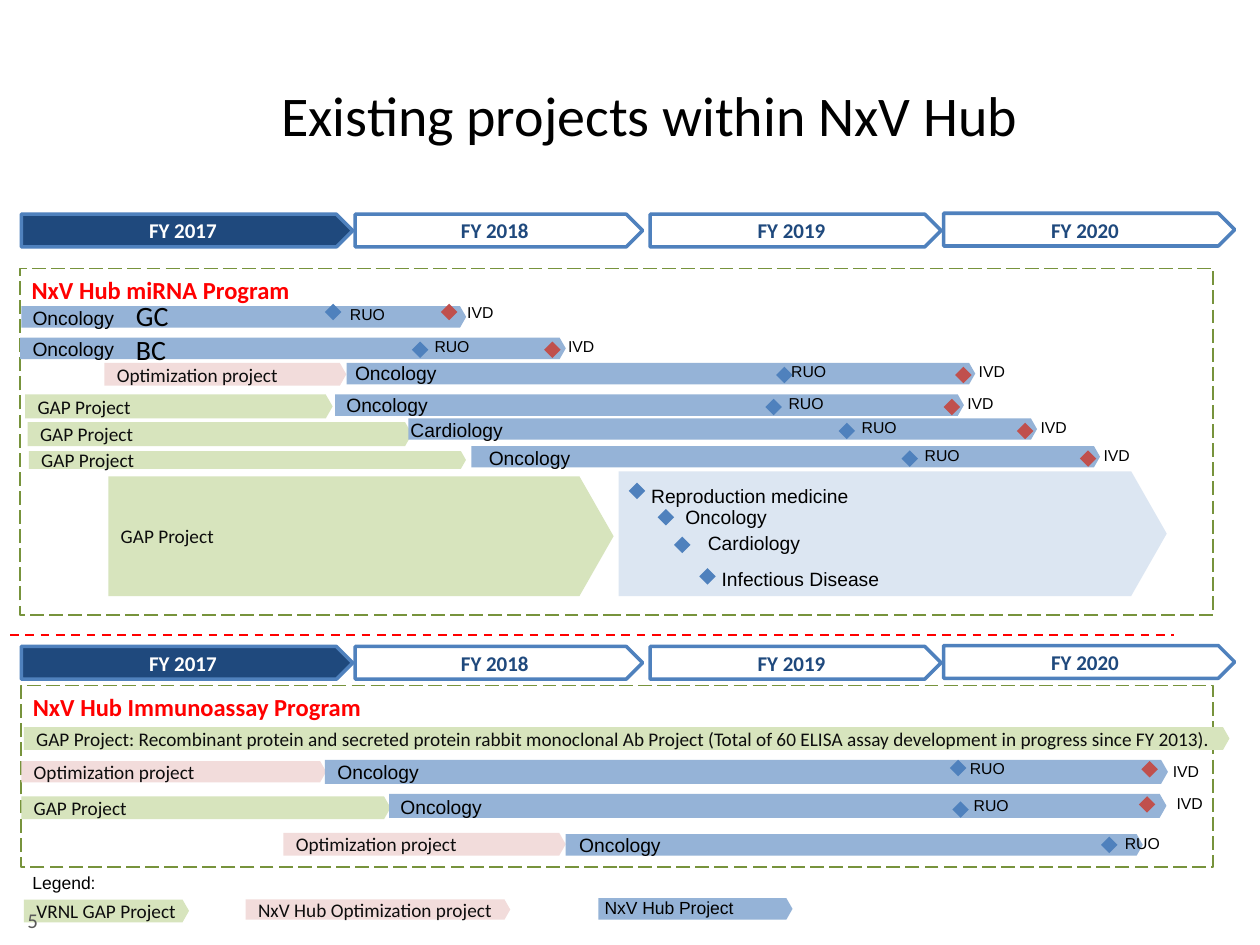
from lxml.etree import SubElement
from pptx import Presentation
from pptx.dml.color import RGBColor
from pptx.enum.dml import MSO_LINE
from pptx.enum.shapes import MSO_CONNECTOR, MSO_SHAPE
from pptx.enum.text import MSO_ANCHOR, PP_ALIGN
from pptx.oxml.ns import qn
from pptx.util import Pt

COLORS = {
    "project": "95B3D7", "topics": "DCE6F2", "gap": "D7E4BD", "opt": "F2DCDB",
    "RUO": "4F81BD", "IVD": "C0504D", "frame": "77933C", "red": "FF0000",
    "navy": "1F497D", "edge": "4F81BD", "white": "FFFFFF", "black": "000000",
    "ink": "0D0D0D", "gray": "595959",
}
STAGES = {"gap": "GAP Project", "opt": "Optimization project"}
WIDTHS = {"RUO": 34.6, "IVD": 29.5, "Oncology": 61.2, "Cardiology": 67.7,
          "Infectious Disease": 105.1, "Reproduction medicine": 128.2}
YEARS = [("FY 2017", 0, 0, 189.4), ("FY 2018", 190.8, 0, 164.2),
         ("FY 2019", 359.3, 0, 166.3), ("FY 2020", 527, -0.5, 166.3)]

# Stage: kind, left, top, width, height, own label if any
# Project: bar box, name, name offset, marks (kind, diamond offset, label offset)
MIRNA = {
    "title": "NxV Hub miRNA Program",
    "stages": [
        ("opt", 48.2, 54, 138.2, 13), ("gap", 2.9, 72, 175.7, 13.7),
        ("gap", 4.3, 87.8, 219.6, 13.7), ("gap", 5, 104.4, 249.8, 10.1),
        ("gap", 50.4, 118.8, 288.7, 68.4),
    ],
    "projects": [
        ((0.7, 21.6, 254.2, 12.2), "Oncology", (-0.7, -3.6),
         [("RUO", 173.5, -1.4, 180.7, -4.3), ("IVD", 239.8, -1.4, 247.7, -5.8)]),
        ((0, 39.6, 311.8, 12.2), "Oncology", (0, -3.6),
         [("RUO", 223.9, 2.2, 229.7, -4.3), ("IVD", 299.5, 2.2, 306, -4.3)]),
        ((186.5, 54, 359.3, 12.2), "Oncology", (-2.2, -4.3),
         [("RUO", 245.5, 2.2, 247, -4.3), ("IVD", 347.8, 2.2, 354.2, -4.3)]),
    ] + [
        (box, name, shift,
         [("RUO", 245.9, 2.5, 252, -4), ("IVD", 347.8, 2.5, 354.2, -4)])
        for box, name, shift in [
            ((180, 72, 359.3, 12.2), "Oncology", (-0.7, -4.3)),
            ((221.8, 85.7, 359.3, 12.2), "Cardiology", (-5.8, -3.6)),
            ((257.8, 101.5, 359.3, 12.2), "Oncology", (2.9, -3.6))]
    ],
}
IMMUNO = {
    "title": "NxV Hub Immunoassay Program",
    "stages": [
        ("gap", 1.4, 23.8, 689, 13,
         "GAP Project: Recombinant protein and secreted protein rabbit monoclonal "
         "Ab Project (Total of 60 ELISA assay development in progress since FY 2013)."),
        ("opt", 0, 43.2, 174.2, 12.2), ("gap", 0, 63.4, 211, 13),
        ("opt", 149.8, 84.2, 161.3, 13),
    ],
    "projects": [
        ((173.5, 42.5, 481.7, 13.7), "Oncology", (0, -3.6),
         [("RUO", 357.1, 0, 361.4, -4.3), ("IVD", 466.6, 0.7, 477.4, -2.2)]),
        ((210.2, 61.9, 444.2, 13.7), "Oncology", (-0.7, -2.9),
         [("RUO", 321.8, 4.3, 326.9, -2.2), ("IVD", 428.4, 1.4, 442.8, -3.6)]),
        ((311, 85, 329.8, 12.2), "Oncology", (0.7, -4.3),
         [("RUO", 306, 1.4, 312.5, -3.6)]),
    ],
}
TOPICS = [("Reproduction medicine", 5.8, 6.5, 11.5, 3.6),
          ("Oncology", 22.3, 21.6, 31, 15.8),
          ("Cardiology", 31.7, 37.4, 43.9, 31),
          ("Infectious Disease", 46.1, 55.4, 51.8, 51.1)]


def rgb(name):
    return RGBColor.from_string(COLORS[name])


def style(shape, words, size, font="Arial", color="black", bold=False,
          align=PP_ALIGN.LEFT):
    shape.text_frame.text = words
    para = shape.text_frame.paragraphs[0]
    para.alignment = align
    for run in para.runs:
        run.font.size, run.font.name, run.font.bold = Pt(size), font, bold
        run.font.color.rgb = rgb(color)


def label(slide, box, words, size, **look):
    shape = slide.shapes.add_textbox(*map(Pt, box))
    style(shape, words, size, **look)
    return shape


def block(slide, kind, box, fill=None, line=None, width=1):
    shape = slide.shapes.add_shape(kind, *map(Pt, box))
    shape.shadow.inherit = False
    if fill:
        shape.fill.solid()
        shape.fill.fore_color.rgb = rgb(fill)
    else:
        shape.fill.background()
    if line:
        shape.line.color.rgb = rgb(line)
        shape.line.width = Pt(width)
    else:
        shape.line.fill.background()
    return shape


def arrow(slide, box, fill, words=""):
    shape = block(slide, MSO_SHAPE.PENTAGON, box, fill)
    shape.adjustments[0] = 0.285
    if words:
        style(shape, words, 11, "Calibri", "ink")
        shape.text_frame.word_wrap = True
        shape.text_frame.margin_right = 0
        shape.text_frame.vertical_anchor = MSO_ANCHOR.MIDDLE


def mark(slide, left, top, kind):
    block(slide, MSO_SHAPE.DIAMOND, (left, top, 9.4, 9.4), kind)


def years(slide, left, top):
    """Row of fiscal years, the current one filled."""
    for i, (year, dx, dy, width) in enumerate(YEARS):
        box = (left + dx, top + dy, width, 18.7)
        fill, color = ("white", "navy") if i else ("navy", "white")
        shape = block(slide, MSO_SHAPE.PENTAGON, box, fill, "edge", 2)
        style(shape, year, 12, "Calibri", color, True, PP_ALIGN.CENTER)
        shape.text_frame.word_wrap = False
        shape.text_frame.vertical_anchor = MSO_ANCHOR.MIDDLE


def project(slide, box, name, shift, marks):
    left, top = box[:2]
    arrow(slide, box, "project")
    label(slide, (left + shift[0], top + shift[1], WIDTHS[name], 20.9), name, 11)
    for kind, dx, dy, tx, ty in marks:
        mark(slide, left + dx, top + dy, kind)
        label(slide, (left + tx, top + ty, WIDTHS[kind], 18), kind, 9)


def panel(slide, box, data):
    """Dashed frame with its heading, stages and projects."""
    left, top = box[:2]
    frame = block(slide, MSO_SHAPE.RECTANGLE, box, line="frame")
    frame.line.dash_style = MSO_LINE.LONG_DASH
    label(slide, (left - 0.5, top, 230, 24.5), data["title"], 14,
          font="Calibri", color="red", bold=True)
    for kind, dx, dy, width, height, *words in data["stages"]:
        arrow(slide, (left + dx, top + dy, width, height), kind,
              words[0] if words else STAGES[kind])
    for (dx, dy, *size), *rest in data["projects"]:
        project(slide, (left + dx, top + dy, *size), *rest)


def topics(slide, box):
    left, top = box[:2]
    arrow(slide, box, "topics")
    for name, dx, dy, tx, ty in TOPICS:
        mark(slide, left + dx, top + dy, "RUO")
        label(slide, (left + tx, top + ty, WIDTHS[name], 20.9), name, 11)


def divider(slide, left, top, width):
    line = slide.shapes.add_connector(
        MSO_CONNECTOR.STRAIGHT, Pt(left), Pt(top), Pt(left + width), Pt(top))
    line.line.color.rgb = rgb("red")
    line.line.width = Pt(1.25)
    line.line.dash_style = MSO_LINE.DASH
    SubElement(line._element.spPr, qn("a:effectLst"))


def legend(slide, left, top):
    label(slide, (left, top, 50.4, 19.4), "Legend:", 10)
    arrow(slide, (left + 2.2, top + 19.4, 94.3, 13), "gap", "VRNL GAP Project")
    arrow(slide, (left + 128.9, top + 19.4, 151.2, 11.5), "opt",
          "NxV Hub Optimization project")
    arrow(slide, (left + 330.5, top + 18.7, 110.9, 12.2), "project")
    label(slide, (left + 326.9, top + 14.4, 89.3, 19.4), "NxV Hub Project", 10)


def main():
    deck = Presentation()
    deck.slide_width, deck.slide_height = Pt(720), Pt(540)
    slide = deck.slides.add_slide(deck.slide_layouts[6])
    title = label(slide, (139, 36, 464.4, 82.1), "Existing projects within NxV Hub",
                  32, font="Calibri", align=PP_ALIGN.CENTER)
    title.text_frame.word_wrap = True
    title.text_frame.margin_bottom = Pt(27.4)
    title.text_frame.vertical_anchor = MSO_ANCHOR.MIDDLE
    years(slide, 12.2, 122.4)
    panel(slide, (11.5, 153.4, 681.8, 198), MIRNA)
    for top, words in [(167.1, "GC"), (186.5, "BC")]:
        label(slide, (70.6, top, 33, 26.6), words, 16, font="Calibri")
    topics(slide, (353.5, 269.3, 313.2, 71.3))
    divider(slide, 5.8, 362.9, 665.2)
    years(slide, 12.2, 369.4)
    panel(slide, (12.2, 391.7, 681.1, 103.7), IMMUNO)
    legend(slide, 11.5, 494.6)
    number = label(slide, (-0.7, 511.2, 29.5, 28.8), "5", 12, font="Calibri",
                   color="gray", align=PP_ALIGN.RIGHT)
    number.text_frame.word_wrap = True
    number.text_frame.vertical_anchor = MSO_ANCHOR.MIDDLE
    deck.save("out.pptx")


if __name__ == "__main__":
    main()
